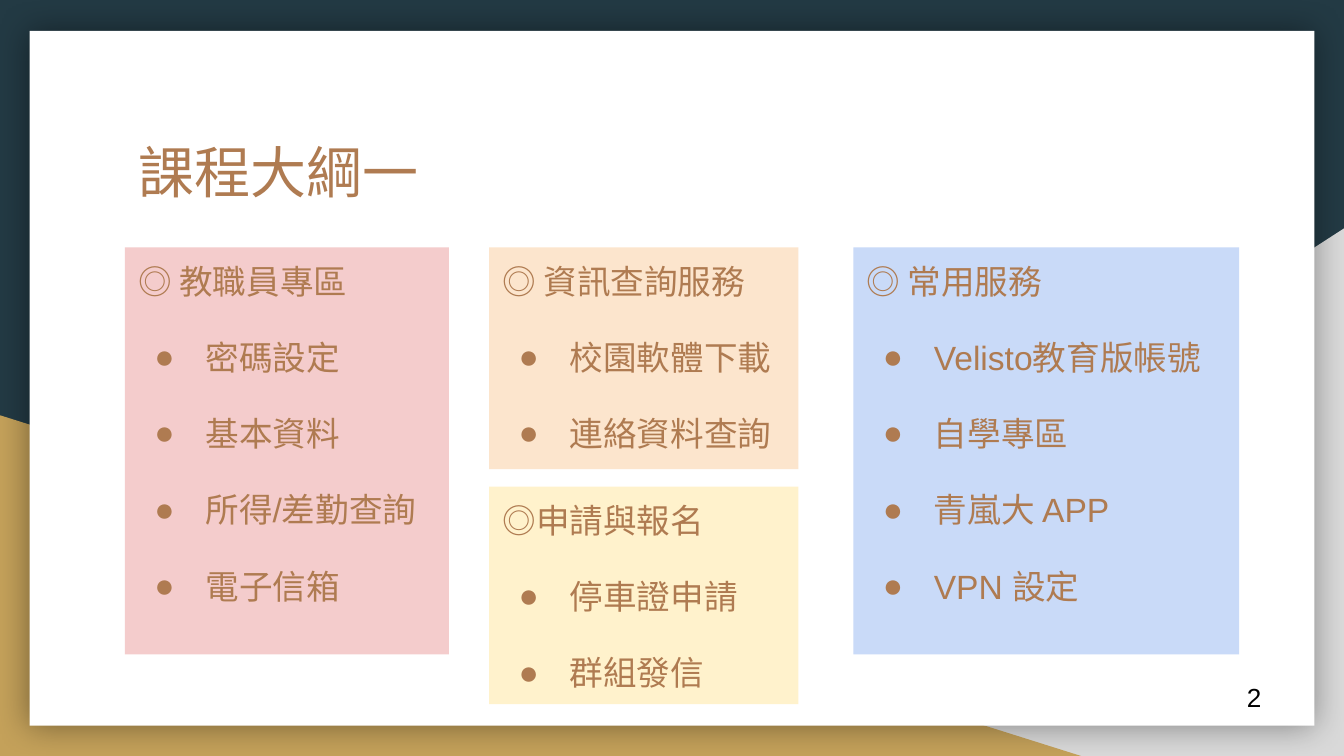
from lxml import etree
from pptx import Presentation
from pptx.dml.color import RGBColor
from pptx.enum.shapes import MSO_SHAPE
from pptx.enum.text import MSO_ANCHOR
from pptx.oxml import parse_xml
from pptx.oxml.ns import nsdecls, qn
from pptx.util import Inches, Pt

RECT, WEDGE = MSO_SHAPE.RECTANGLE, MSO_SHAPE.RIGHT_TRIANGLE
TOP, MIDDLE = MSO_ANCHOR.TOP, MSO_ANCHOR.MIDDLE

NAVY = RGBColor(0x23, 0x3A, 0x44)
GREY = RGBColor(0xD9, 0xD9, 0xD9)
GOLD = RGBColor(0xC4, 0xA1, 0x5A)
WHITE = RGBColor(0xFF, 0xFF, 0xFF)
BLACK = RGBColor(0, 0, 0)
BROWN = RGBColor(0xAF, 0x7B, 0x51)
PINK = RGBColor(0xF4, 0xCC, 0xCC)
PEACH = RGBColor(0xFC, 0xE5, 0xCD)
BLUE = RGBColor(0xC9, 0xDA, 0xF8)
CREAM = RGBColor(0xFF, 0xF2, 0xCC)

TITLE = "課程大綱一"
NUMBER = "2"
COLUMNS = [
    (0.93, 2.41, [
        (1.84, 3.03, PINK, "◎ 教職員專區",
         ["密碼設定", "基本資料", "所得/差勤查詢", "電子信箱"]),
    ]),
    (3.64, 2.3, [
        (1.84, 1.65, PEACH, "◎ 資訊查詢服務", ["校園軟體下載", "連絡資料查詢"]),
        (3.62, 1.62, CREAM, "◎申請與報名", ["停車證申請", "群組發信"]),
    ]),
    (6.35, 2.87, [
        (1.84, 3.03, BLUE, "◎ 常用服務",
         ["Velisto教育版帳號", "自學專區", "青嵐大 APP", "VPN 設定"]),
    ]),
]
ITEM = {"line_spacing": 1.15, "space_before": Pt(16)}

prs = Presentation()
prs.slide_width = Inches(10)
prs.slide_height = prs.slide_width * 9 // 16
slide = prs.slides.add_slide(prs.slide_layouts[6])
slide.background.fill.solid()
slide.background.fill.fore_color.rgb = NAVY


def add_block(kind, box, color):
    shape = slide.shapes.add_shape(kind, *map(Inches, box))
    shape.shadow.inherit = False
    shape.fill.solid()
    shape.fill.fore_color.rgb = color
    shape.line.fill.background()
    return shape


def add_text(box, color, size, lines, fill=None, anchor=TOP):
    shape = slide.shapes.add_textbox(*map(Inches, box))
    if fill:
        shape.fill.solid()
        shape.fill.fore_color.rgb = fill
    frame = shape.text_frame
    form = {"word_wrap": True, "vertical_anchor": anchor}
    for side in ("left", "top", "right", "bottom"):
        form["margin_" + side] = Inches(0.1)
    for name, value in form.items():
        setattr(frame, name, value)
    frame.text = "\n".join(lines)
    for para in frame.paragraphs:
        font = para.runs[0].font
        font.name, font.size = "Arial", Pt(size)
        font.color.rgb = color
    return frame


def add_bullet(para):
    for name, value in ITEM.items():
        setattr(para, name, value)
    props = para._p.get_or_add_pPr()
    props.set("marL", str(Inches(0.5)))
    props.set("indent", str(Inches(-0.38)))
    tint = etree.SubElement(props, qn("a:buClr"))
    etree.SubElement(tint, qn("a:srgbClr"), val=str(BROWN))
    etree.SubElement(props, qn("a:buFont"), typeface="Arial")
    etree.SubElement(props, qn("a:buChar"), char="●")


right = add_block(WEDGE, (3.92, 1.7, 6.08, 3.93), GREY)
right._element.spPr.find(qn("a:xfrm")).set("flipH", "1")
add_block(WEDGE, (0, 3.09, 8.06, 2.54), GOLD)
card = add_block(RECT, (0.22, 0.23, 9.56, 5.17), WHITE)
glow = card._element.spPr.find(qn("a:effectLst"))
glow.append(parse_xml(
    f'<a:outerShdw {nsdecls("a")} blurRad="{Pt(18)}" dist="0" dir="0" '
    'algn="ctr" rotWithShape="0"><a:srgbClr val="000000">'
    '<a:alpha val="40000"/></a:srgbClr></a:outerShdw>'))

add_text((0.93, 0.92, 8.21, 1.04), BROWN, 30, [TITLE])
for left, width, panels in COLUMNS:
    for top, height, fill, head, items in panels:
        frame = add_text((left, top, width, height), BROWN, 18, [head] + items, fill)
        for para in frame.paragraphs[1:]:
            add_bullet(para)
add_text((9.18, 4.97, 0.6, 0.43), BLACK, 14, [NUMBER], anchor=MIDDLE)

prs.save("out.pptx")
